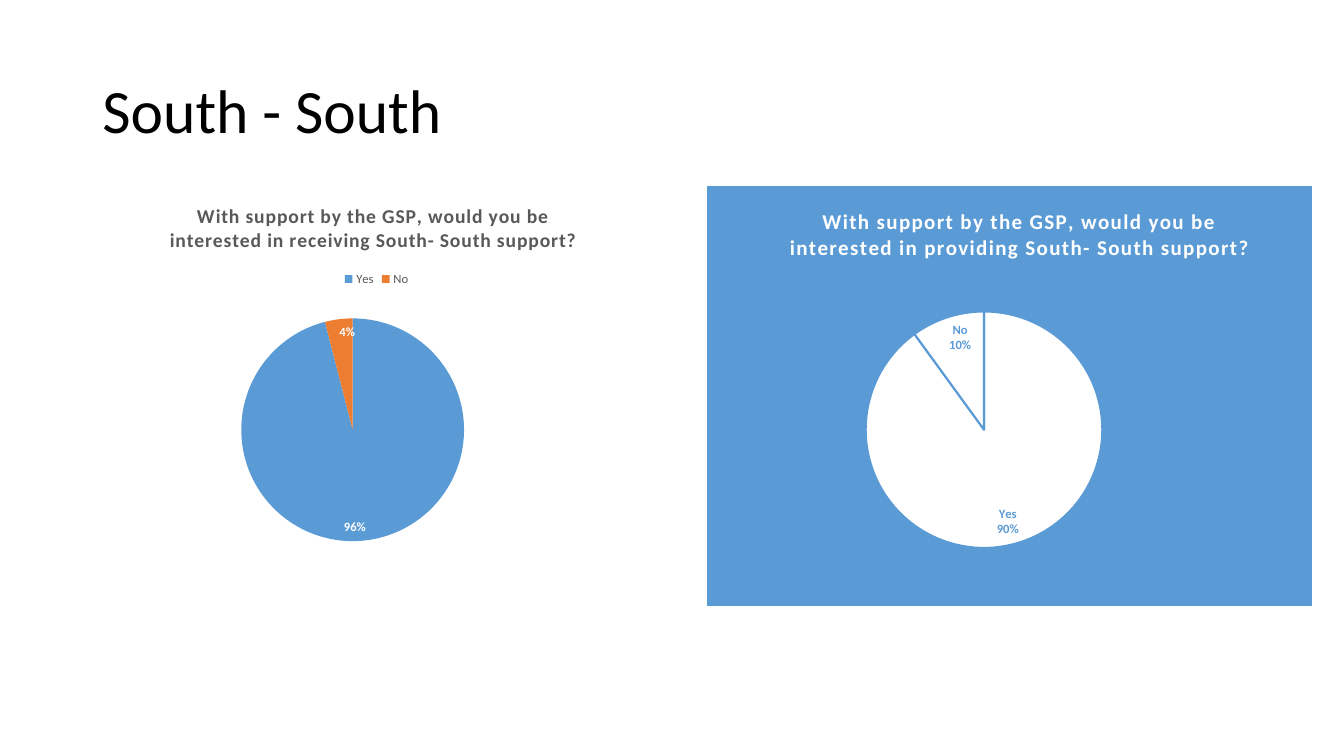
"""Builds the South - South survey slide with two pie charts."""
import dataclasses

import pptx
import pptx.chart.data
import pptx.dml.color
import pptx.enum.chart
import pptx.enum.text
import pptx.oxml
import pptx.oxml.ns
import pptx.util


@dataclasses.dataclass(frozen=True)
class Theme:
    font: str = "Calibri"
    black: str = "000000"
    white: str = "FFFFFF"
    grey: str = "595959"
    blue: str = "5B9BD5"
    orange: str = "ED7D31"
    title_size: float = 44
    receiving_size: float = 14
    providing_size: float = 15
    chart_size: float = 10
    label_size: float = 9


class SurveySlide:
    def __init__(self, presentation, theme):
        self.theme = theme
        self.slide = presentation.slides.add_slide(presentation.slide_layouts[5])

    def style_font(self, font, size, color, bold=False):
        font.name = self.theme.font
        font.size = pptx.util.Pt(size)
        font.bold = bold
        font.color.rgb = pptx.dml.color.RGBColor.from_string(color)

    def place(self, element, index, **measures):
        for layout in element.xpath("c:layout"):
            element.remove(layout)
        values = "".join(f'<c:{name} val="{value}"/>' for name, value in measures.items())
        element.insert(index, pptx.oxml.parse_xml(
            f'<c:layout {pptx.oxml.ns.nsdecls("c")}><c:manualLayout>{values}'
            "</c:manualLayout></c:layout>"))

    def add_title(self, text, left, top, width, height):
        title = self.slide.shapes.title
        title.left, title.top = pptx.util.Pt(left), pptx.util.Pt(top)
        title.width, title.height = pptx.util.Pt(width), pptx.util.Pt(height)
        frame = title.text_frame
        frame.text = text
        frame.vertical_anchor = pptx.enum.text.MSO_ANCHOR.MIDDLE
        paragraph = frame.paragraphs[0]
        paragraph.alignment = pptx.enum.text.PP_ALIGN.LEFT
        paragraph.line_spacing = 0.9
        self.style_font(paragraph.runs[0].font, self.theme.title_size, self.theme.black)

    def add_pie(self, question, shares, left, width, slice_colors, label_color):
        data = pptx.chart.data.CategoryChartData()
        data.categories = ["Yes", "No"]
        data.add_series("Series 1", shares)
        chart = self.slide.shapes.add_chart(
            pptx.enum.chart.XL_CHART_TYPE.PIE, pptx.util.Pt(left), pptx.util.Pt(133.2),
            pptx.util.Pt(width), pptx.util.Pt(300), data).chart
        self.style_font(chart.font, self.theme.chart_size, self.theme.black)
        chart.has_legend = False
        chart.has_title = True
        chart.chart_title.text_frame.text = question
        chart.plots[0].vary_by_categories = True
        series = chart.plots[0].series[0]
        for index, color in enumerate(slice_colors):
            fill = series.points[index].format.fill
            fill.solid()
            fill.fore_color.rgb = pptx.dml.color.RGBColor.from_string(color)
        labels = series.data_labels
        labels.show_value = False
        labels.show_percentage = True
        labels.number_format = "0%"
        labels.number_format_is_linked = False
        labels.position = pptx.enum.chart.XL_LABEL_POSITION.INSIDE_END
        self.style_font(labels.font, self.theme.label_size, label_color, bold=True)
        self.place(chart._chartSpace.xpath("c:chart/c:plotArea")[0], 0,
                   layoutTarget="inner", xMode="edge", yMode="edge",
                   x=0.262, y=0.247, w=0.392, h=0.665)
        return chart

    def style_question(self, chart, size, color, spacing, top):
        run = chart.chart_title.text_frame.paragraphs[0].runs[0]
        self.style_font(run.font, size, color, bold=True)
        run._r.get_or_add_rPr().set("spc", str(spacing))
        self.place(chart._chartSpace.xpath("c:chart/c:title")[0], 1,
                   xMode="edge", yMode="edge", x=0.13, y=top)

    def add_legend(self, chart):
        chart.has_legend = True
        chart.legend.position = pptx.enum.chart.XL_LEGEND_POSITION.TOP
        chart.legend.include_in_layout = False
        self.style_font(chart.legend.font, self.theme.label_size, self.theme.grey)

    def name_slices(self, chart):
        labels = chart.plots[0].series[0].data_labels
        labels.show_category_name = True
        bubble = chart._chartSpace.xpath(".//c:ser/c:dLbls/c:showBubbleSize")[0]
        bubble.addnext(pptx.oxml.parse_xml(
            f'<c:separator {pptx.oxml.ns.nsdecls("c")}>\n</c:separator>'))

    def outline_slices(self, chart, color, width):
        for index in range(2):
            line = chart.plots[0].series[0].points[index].format.line
            line.color.rgb = pptx.dml.color.RGBColor.from_string(color)
            line.width = pptx.util.Pt(width)

    def fill_background(self, chart, color):
        solid = f'<a:solidFill><a:srgbClr val="{color}"/></a:solidFill>'
        chart._chartSpace.xpath("c:chart")[0].addnext(pptx.oxml.parse_xml(
            f'<c:spPr {pptx.oxml.ns.nsdecls("c", "a")}>{solid}'
            f'<a:ln w="{pptx.util.Pt(0.75)}">{solid}</a:ln></c:spPr>'))


def main():
    presentation = pptx.Presentation()
    presentation.slide_width = pptx.util.Pt(960)
    presentation.slide_height = pptx.util.Pt(540)
    theme = Theme()
    survey = SurveySlide(presentation, theme)
    survey.add_title("South - South", 66, 28.8, 828, 104.4)

    question = "With support by the GSP, would you be interested in {} South- South support?"
    receiving = survey.add_pie(question.format("receiving"), (96, 4), 66, 406,
                               (theme.blue, theme.orange), theme.white)
    survey.style_question(receiving, theme.receiving_size, theme.grey, 50, 0.03)
    survey.add_legend(receiving)

    providing = survey.add_pie(question.format("providing"), (90, 10), 505, 432,
                               (theme.white, theme.white), theme.blue)
    survey.style_question(providing, theme.providing_size, theme.white, 100, 0.04)
    survey.name_slices(providing)
    survey.outline_slices(providing, theme.blue, 1.5)
    survey.fill_background(providing, theme.blue)
    presentation.save("out.pptx")


if __name__ == "__main__":
    main()
